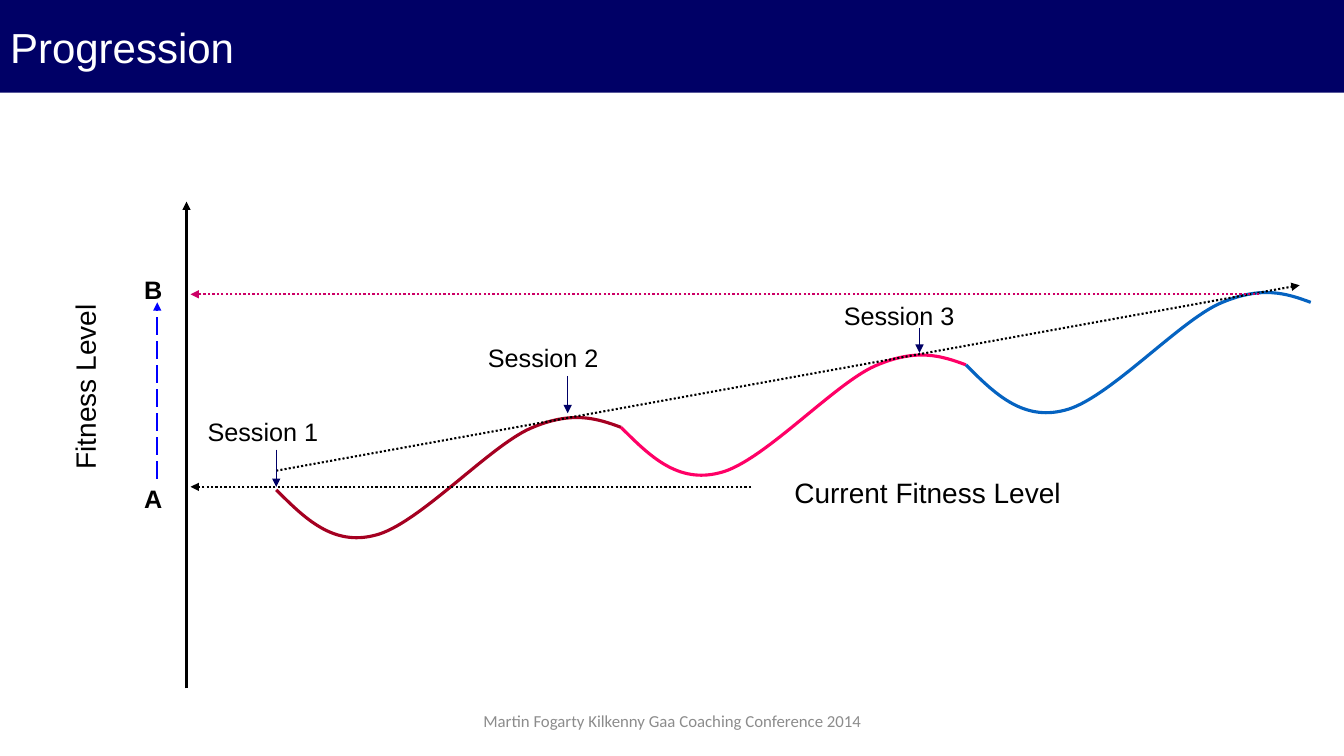
from pptx import Presentation
from pptx.dml.color import RGBColor
from pptx.enum import dml, text
from pptx.oxml.ns import qn
from pptx.util import Inches, Pt
from lxml import etree

NAVY = RGBColor(0x00, 0x00, 0x66)
BLACK = RGBColor(0x00, 0x00, 0x00)
WHITE = RGBColor(0xFF, 0xFF, 0xFF)
GREY = RGBColor(0x8C, 0x8C, 0x8C)
DARK_RED = RGBColor(0xA5, 0x00, 0x21)
PINK = RGBColor(0xFF, 0x00, 0x66)
BLUE = RGBColor(0x05, 0x63, 0xC1)
MAGENTA = RGBColor(0xCC, 0x00, 0x66)
BRIGHT_BLUE = RGBColor(0x00, 0x00, 0xFF)

DOTS = dml.MSO_LINE.ROUND_DOT
LONG_DASH = dml.MSO_LINE.LONG_DASH

prs = Presentation()
prs.slide_width, prs.slide_height = Inches(13.33), Inches(7.5)
slide = prs.slides.add_slide(prs.slide_layouts[5])
shapes = slide.shapes


def add_arrow(start, end, color, width, dash=None):
    """Draw a straight line with a triangle head at its end."""
    arrow = shapes.add_connector(1, *map(Inches, start + end))
    arrow.line.color.rgb = color
    arrow.line.width = Pt(width)
    if dash:
        arrow.line.dash_style = dash
    properties = arrow.line._get_or_add_ln()
    etree.SubElement(properties, qn("a:tailEnd"), type="triangle")
    etree.SubElement(arrow._element.spPr, qn("a:effectLst"))


def write(shape, wording, **font_format):
    paragraph = shape.text_frame.paragraphs[0]
    run = paragraph.add_run()
    run.text = wording
    run.font.color.rgb = font_format.pop("color", BLACK)
    for attribute, value in ({"name": "Arial"} | font_format).items():
        setattr(run.font, attribute, value)
    return paragraph


# Title bar
title = shapes.title
title.left, title.top, title.width, title.height = 0, 0, prs.slide_width, Inches(0.92)
title.fill.solid()
title.fill.fore_color.rgb = NAVY
title.text_frame.auto_size = text.MSO_AUTO_SIZE.NONE
title.text_frame.vertical_anchor = text.MSO_ANCHOR.MIDDLE
write(title, "Progression", size=Pt(30), color=WHITE).alignment = text.PP_ALIGN.LEFT

# One fitness wave per session, each starting where the last one ends.
# After the start point, every three points make up one Bezier segment.
WAVE = [(2.74, 4.86),
        (3.02, 5.14), (3.3, 5.42), (3.72, 5.31),
        (4.14, 5.21), (4.85, 4.43), (5.26, 4.25),
        (5.67, 4.07), (5.92, 4.15), (6.16, 4.24)]
STEP_X, STEP_Y = 3.42, -0.62

for session, color in enumerate((DARK_RED, PINK, BLUE)):
    points = [(Inches(x + session * STEP_X), Inches(y + session * STEP_Y)) for x, y in WAVE]
    builder = shapes.build_freeform(*points[0])
    builder.add_line_segments(points[1:], close=False)
    wave = builder.convert_to_shape()
    wave.shadow.inherit = False
    wave.fill.background()
    wave.line.color.rgb = color
    wave.line.width = Pt(2.25)
    segments = list(wave._element.iter(qn("a:lnTo")))
    for first in range(0, len(segments), 3):
        curve = etree.Element(qn("a:cubicBezTo"))
        segments[first].addprevious(curve)
        for segment in segments[first:first + 3]:
            curve.append(segment[0])
            segment.getparent().remove(segment)

# Axis, trend, level and session arrows
for start, end, color, width, dash in (
    ((2.74, 4.67), (12.89, 2.83), BLACK, 1.5, DOTS),
    ((2.74, 4.46), (2.74, 4.83), NAVY, 1, None),
    ((5.63, 3.73), (5.63, 4.1), NAVY, 1, None),
    ((9.12, 3.25), (9.12, 3.5), NAVY, 1, None),
    ((1.85, 6.83), (1.85, 2), BLACK, 1.5, None),
    ((12.49, 2.92), (1.89, 2.92), MAGENTA, 1.6, DOTS),
    ((7.45, 4.83), (1.89, 4.83), BLACK, 1.6, DOTS),
    ((1.56, 4.75), (1.56, 3), BRIGHT_BLUE, 1.55, LONG_DASH),
):
    add_arrow(start, end, color, width, dash)

# Labels
for wording, left, top, width, height, size, bold in (
    ("Current Fitness Level", 7.78, 4.67, 2.87, 0.44, 20, False),
    ("Session 1", 1.96, 4.08, 1.31, 0.4, 18, False),
    ("Session 2", 4.74, 3.35, 1.31, 0.4, 18, False),
    ("Session 3", 8.27, 2.93, 1.31, 0.4, 18, False),
    ("A", 1.33, 4.75, 0.38, 0.4, 18, True),
    ("B", 1.33, 2.67, 0.38, 0.4, 18, True),
):
    label = shapes.add_textbox(*map(Inches, (left, top, width, height)))
    label.text_frame.word_wrap = False
    label.text_frame.auto_size = text.MSO_AUTO_SIZE.SHAPE_TO_FIT_TEXT
    write(label, wording, size=Pt(size), bold=bold)

axis_title = shapes.add_textbox(Inches(-0.24), Inches(3.45), Inches(2.17), Inches(0.44))
axis_title.rotation = 270
axis_title.text_frame.word_wrap = True
write(axis_title, "Fitness Level", size=Pt(20))

footer = shapes.add_textbox(Inches(4.42), Inches(6.95), Inches(4.5), Inches(0.4))
footer.text_frame.word_wrap = True
footer.text_frame.vertical_anchor = text.MSO_ANCHOR.MIDDLE
credit = write(footer, "Martin Fogarty Kilkenny Gaa Coaching Conference 2014",
               name="Calibri", size=Pt(12), color=GREY)
credit.alignment = text.PP_ALIGN.CENTER

prs.save("out.pptx")
